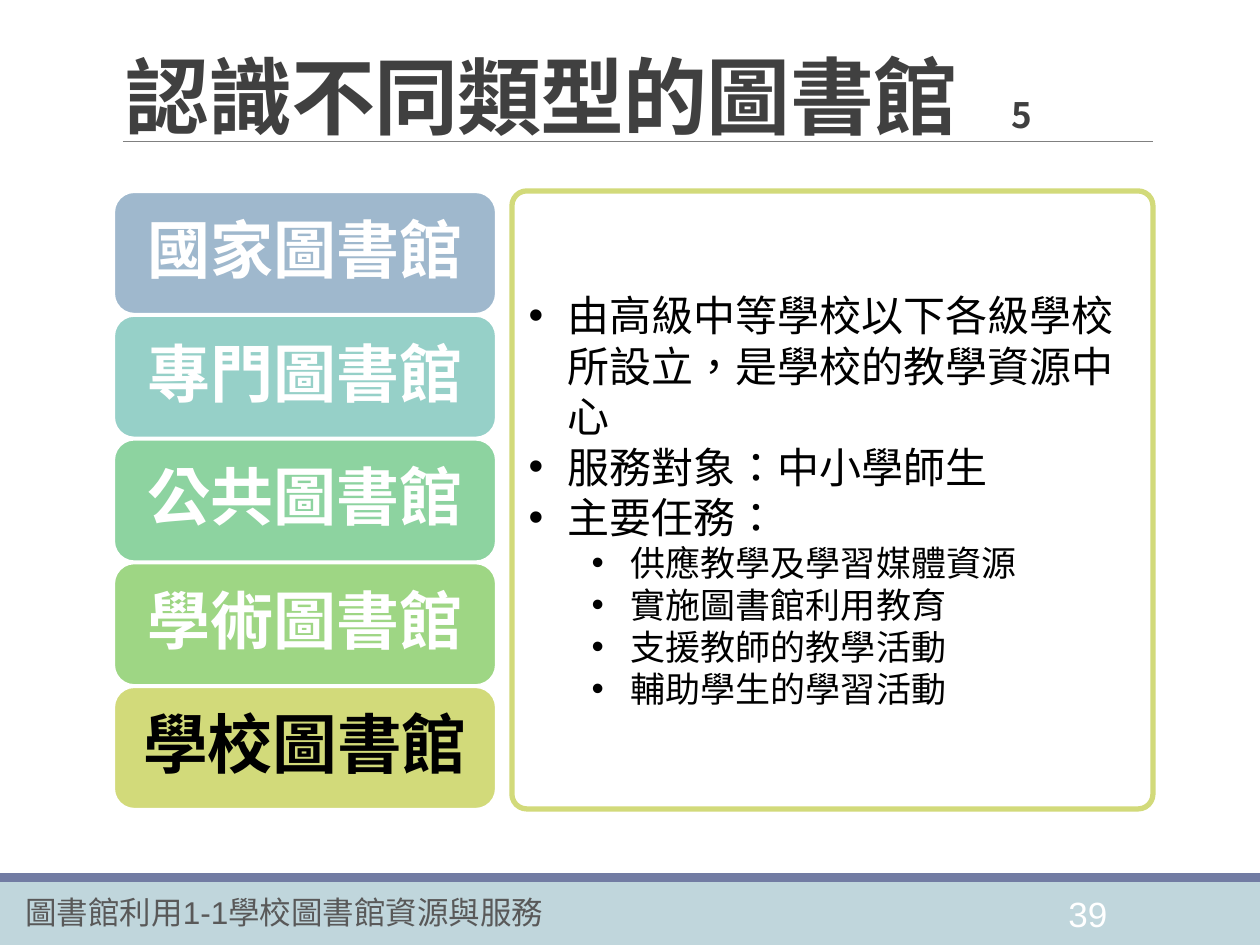
from lxml import etree
from pptx import Presentation
from pptx.dml.color import RGBColor
from pptx.enum.shapes import MSO_CONNECTOR, MSO_SHAPE
from pptx.enum.text import MSO_ANCHOR, PP_ALIGN
from pptx.oxml.ns import qn
from pptx.util import Pt

RECTANGLE = MSO_SHAPE.RECTANGLE
ROUNDED = MSO_SHAPE.ROUNDED_RECTANGLE
STRAIGHT = MSO_CONNECTOR.STRAIGHT
MIDDLE, BOTTOM = MSO_ANCHOR.MIDDLE, MSO_ANCHOR.BOTTOM
LEFT, CENTER = PP_ALIGN.LEFT, PP_ALIGN.CENTER
PX = 914400 / 126
CJK_FONT = "Noto Sans CJK SC"


def px(*lengths):
    return [round(length * PX) for length in lengths]


def add_run(paragraph, text, size, color, bold=False, name="Arial"):
    run = paragraph.add_run()
    run.text = text
    run.font.size = Pt(size)
    run.font.bold = bold
    run.font.color.rgb = RGBColor.from_string(color)
    run.font.name = name
    properties = run.font._element
    properties.set("lang", "zh-TW")
    etree.SubElement(properties, qn("a:ea"), typeface=CJK_FONT)


presentation = Presentation()
presentation.slide_width, presentation.slide_height = px(1260, 945)
slide = presentation.slides.add_slide(presentation.slide_layouts[6])
shapes = slide.shapes

for top, height, color in [(882, 63, "C0D6DC"), (873, 9, "727CA3")]:
    band = shapes.add_shape(RECTANGLE, *px(0, top, 1260, height))
    band.shadow.inherit = False
    band.fill.solid()
    band.fill.fore_color.rgb = RGBColor.from_string(color)
    band.line.fill.background()

rule = shapes.add_connector(STRAIGHT, *px(123, 141, 1153, 141))
rule.line.color.rgb = RGBColor.from_string("808080")
rule.line.width = Pt(0.5)
etree.SubElement(rule._element.spPr, qn("a:effectLst"))

for left, top, width, text, size, color in [
    (1056, 886, 88, "39", 20, "FFFFFF"),
    (13, 887, 586, "圖書館利用1-1學校圖書館資源與服務", 18, "595959"),
]:
    footer = shapes.add_textbox(*px(left, top, width, 50))
    footer.text_frame.word_wrap = True
    add_run(footer.text_frame.paragraphs[0], text, size, color)

title = shapes.add_textbox(*px(113, 50, 1040, 102))
title.text_frame.word_wrap = True
title.text_frame.vertical_anchor = BOTTOM
paragraph = title.text_frame.paragraphs[0]
paragraph.line_spacing = 0.85
tabs = etree.SubElement(paragraph._p.get_or_add_pPr(), qn("a:tabLst"))
etree.SubElement(tabs, qn("a:tab"), pos=str(px(886)[0]), algn="l")
add_run(paragraph, "認識不同類型的圖書館", 48, "404040", True, CJK_FONT)
add_run(paragraph, "\t5", 20, "404040", True, CJK_FONT)
for run in paragraph.runs:
    run.font._element.set("spc", "-50")

libraries = [
    ("國家圖書館", "9FB8CD", 36, "FFFFFF"),
    ("專門圖書館", "96D0C8", 36, "FFFFFF"),
    ("公共圖書館", "8DD3A0", 36, "FFFFFF"),
    ("學術圖書館", "9ED684", 36, "FFFFFF"),
    ("學校圖書館", "D2DA7A", 37, "000000"),
]
for index, (text, fill, size, color) in enumerate(libraries):
    button = shapes.add_shape(ROUNDED, *px(114, 192 + 123.75 * index, 382, 122))
    button.shadow.inherit = False
    button.fill.solid()
    button.fill.fore_color.rgb = RGBColor.from_string(fill)
    button.line.color.rgb = RGBColor.from_string("FFFFFF")
    button.line.width = Pt(1.25)
    button.text_frame.vertical_anchor = MIDDLE
    paragraph = button.text_frame.paragraphs[0]
    paragraph.alignment = CENTER
    paragraph.line_spacing = 0.9
    add_run(paragraph, text, size, color, True)

panel = shapes.add_shape(ROUNDED, *px(512, 191, 641, 618))
panel.adjustments[0] = 0.024
panel.shadow.inherit = False
panel.fill.solid()
panel.fill.fore_color.rgb = RGBColor.from_string("FFFFFF")
panel.line.color.rgb = RGBColor.from_string("D2DA7A")
panel.line.width = Pt(3)
panel.text_frame.vertical_anchor = MIDDLE
points = [
    (0, "由高級中等學校以下各級學校所設立，是學校的教學資源中心"),
    (0, "服務對象：中小學師生"),
    (0, "主要任務："),
    (1, "供應教學及學習媒體資源"),
    (1, "實施圖書館利用教育"),
    (1, "支援教師的教學活動"),
    (1, "輔助學生的學習活動"),
]
for index, (level, text) in enumerate(points):
    frame = panel.text_frame
    paragraph = frame.add_paragraph() if index else frame.paragraphs[0]
    paragraph.alignment = LEFT
    paragraph.level = level
    properties = paragraph._p.get_or_add_pPr()
    properties.set("marL", str(px(39 + 63 * level)[0]))
    properties.set("indent", str(px(-39)[0]))
    etree.SubElement(properties, qn("a:buFont"), typeface="Arial")
    etree.SubElement(properties, qn("a:buChar"), char="•")
    add_run(paragraph, text, 24 - 4 * level, "000000")

presentation.save("out.pptx")
